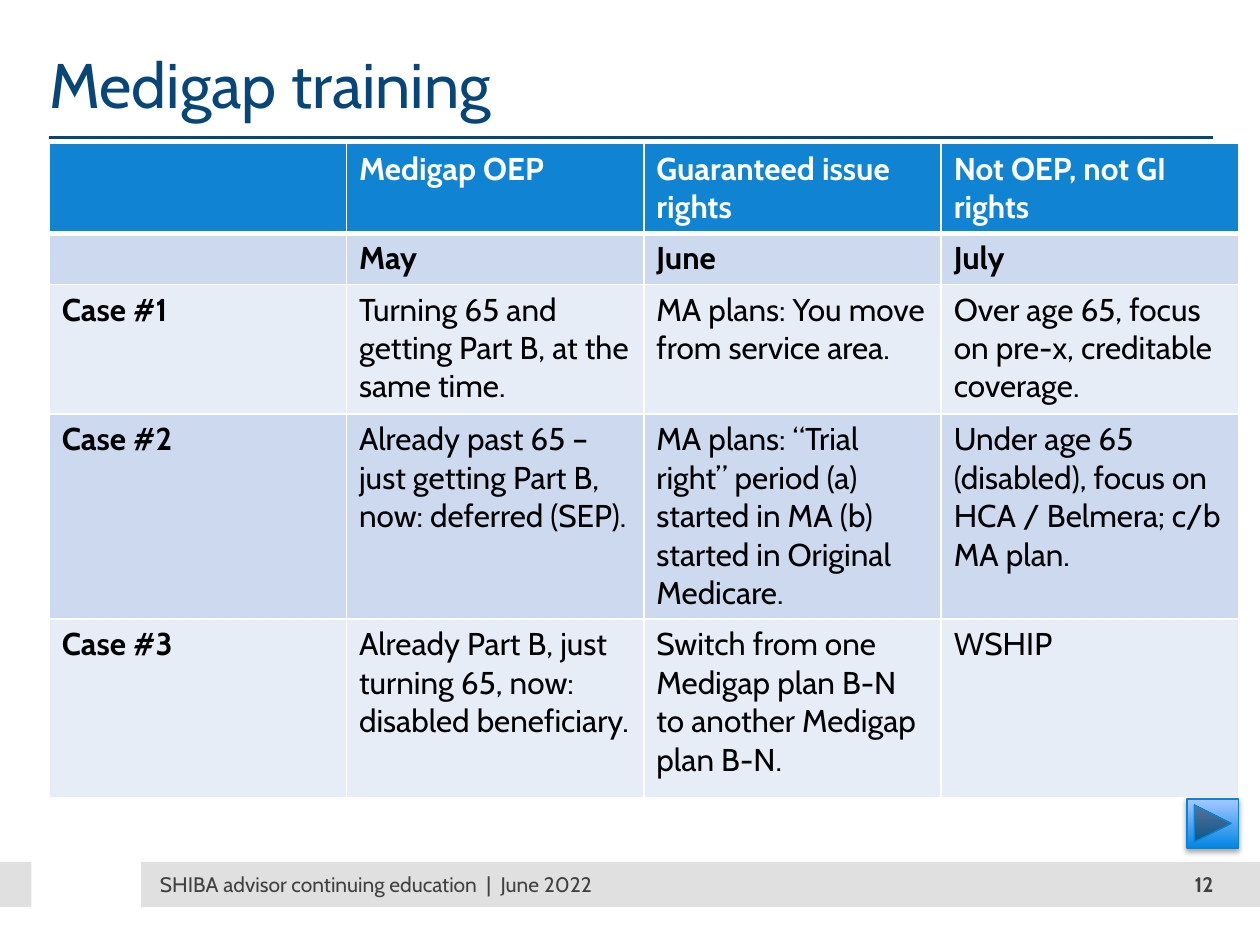
from lxml.etree import SubElement
from pptx import Presentation
from pptx.dml.color import RGBColor
from pptx.enum.shapes import MSO_CONNECTOR as Conn, MSO_SHAPE as Kind
from pptx.enum.text import MSO_ANCHOR as Anchor, PP_ALIGN as Align
from pptx.oxml import parse_xml
from pptx.oxml.ns import nsdecls, qn
from pptx.util import Inches, Pt

TITLE = "Medigap training"
ROWS = [
    ["", "Medigap OEP", "Guaranteed issue rights", "Not OEP, not GI rights"],
    ["", "May", "June", "July"],
    ["Case #1", "Turning 65 and getting Part B, at the same time.",
     "MA plans: You move from service area.",
     "Over age 65, focus on pre-x, creditable coverage."],
    ["Case #2", "Already past 65 – just getting Part B, now: deferred (SEP).",
     "MA plans: “Trial right” period (a) started in MA (b) started in Original Medicare.",
     "Under age 65 (disabled), focus on HCA / Belmera; c/b MA plan."],
    ["Case #3", "Already Part B, just turning 65, now: disabled beneficiary.",
     "Switch from one Medigap plan B-N to another Medigap plan B-N.", "WSHIP"],
]
HEIGHTS = [0.69, 0.39, 1.03, 1.61, 1.42]
WIDTH = 2.36
LEFT = 0.39
BARS = [(1.12, 6.84, 8.88, 0.36), (0, 6.84, 0.25, 0.36)]
FOOTER = [
    ("SHIBA advisor continuing education  |  June 2022", (1.27, 6.91, 5, 0.22), Align.LEFT, False),
    ("12", (8.93, 6.91, 0.7, 0.22), Align.RIGHT, True),
]
NAVY, GREY, WHITE, BLACK = "084678", "404040", "FFFFFF", "000000"
HEAD, BANDS = "1084D3", ["E7EDF7", "CCD9EF"]


def tint(color):
    return RGBColor.from_string(color)


def inches(box):
    return [Inches(v) for v in box]


def write(frame, text, size, color, bold=False, align=Align.LEFT):
    para = frame.paragraphs[0]
    para.text = text
    para.alignment = align
    for key, value in {"name": "Cabin", "size": Pt(size), "bold": bold}.items():
        setattr(para.font, key, value)
    para.font.color.rgb = tint(color)


def set_frame(frame, anchor):
    form = {"margin_left": 0, "margin_top": 0, "margin_right": 0, "margin_bottom": 0,
            "word_wrap": True, "vertical_anchor": anchor}
    for key, value in form.items():
        setattr(frame, key, value)


def edge(cell, base):
    props = cell._tc.get_or_add_tcPr()
    widths = {"a:lnL": 1, "a:lnR": 1, "a:lnT": 1, "a:lnB": base}
    for spot, (tag, width) in enumerate(widths.items()):
        line = parse_xml(
            f'<{tag} {nsdecls("a")} w="{Pt(width)}"><a:solidFill>'
            f'<a:srgbClr val="{WHITE}"/></a:solidFill></{tag}>')
        props.insert(spot, line)


def add_grid(slide):
    box = inches((LEFT, 1.14, WIDTH * len(ROWS[0]), sum(HEIGHTS)))
    grid = slide.shapes.add_table(len(ROWS), len(ROWS[0]), *box).table
    for col in grid.columns:
        col.width = Inches(WIDTH)
    for r, (row, height) in enumerate(zip(ROWS, HEIGHTS)):
        grid.rows[r].height = Inches(height)
        for c, text in enumerate(row):
            cell = grid.cell(r, c)
            cell.fill.solid()
            cell.fill.fore_color.rgb = tint(BANDS[r % 2] if r else HEAD)
            write(cell.text_frame, text, 18, BLACK if r else WHITE, r < 2 or c == 0)
            edge(cell, 1 if r else 3)


def add_button(slide):
    box = inches((9.42, 6.34, 0.41, 0.39))
    button = slide.shapes.add_shape(Kind.ACTION_BUTTON_FORWARD_OR_NEXT, *box)
    button.fill.gradient()
    button.fill.gradient_angle = 90
    for stop, color in zip(button.fill.gradient_stops, ["0087E3", "A8C8FF"]):
        stop.color.rgb = tint(color)
    for stop, place in zip(button.fill.gradient_stops, [0, 1]):
        stop.position = place
    button.line.color.rgb = tint("0B82D3")
    button.line.width = Pt(0.75)
    button._element.spPr.append(parse_xml(
        f'<a:effectLst {nsdecls("a")}><a:outerShdw blurRad="{Pt(3.1)}" dist="{Pt(1.8)}" '
        f'dir="5400000" rotWithShape="0"><a:srgbClr val="{BLACK}"><a:alpha val="35000"/>'
        '</a:srgbClr></a:outerShdw></a:effectLst>'))


def main():
    deck = Presentation()
    deck.slide_width, deck.slide_height = Inches(10), Inches(7.5)
    slide = deck.slides.add_slide(deck.slide_layouts[5])
    for box in BARS:
        bar = slide.shapes.add_shape(Kind.RECTANGLE, *inches(box))
        bar.shadow.inherit = False
        bar.fill.solid()
        bar.fill.fore_color.rgb = tint("E0E0E0")
        bar.line.fill.background()

    rule = slide.shapes.add_connector(Conn.STRAIGHT, *inches((LEFT, 1.09, 9.63, 1.09)))
    rule.line.color.rgb = tint(NAVY)
    rule.line.width = Pt(2)
    SubElement(rule._element.spPr, qn("a:effectLst"))

    title = slide.shapes.title
    title.left, title.top, title.width, title.height = inches((LEFT, 0.36, 9.11, 0.83))
    set_frame(title.text_frame, Anchor.TOP)
    write(title.text_frame, TITLE, 36, NAVY)

    add_grid(slide)
    add_button(slide)
    for text, box, align, bold in FOOTER:
        note = slide.shapes.add_textbox(*inches(box))
        set_frame(note.text_frame, Anchor.MIDDLE)
        write(note.text_frame, text, 12, GREY, bold, align)
    deck.save("out.pptx")


if __name__ == "__main__":
    main()
